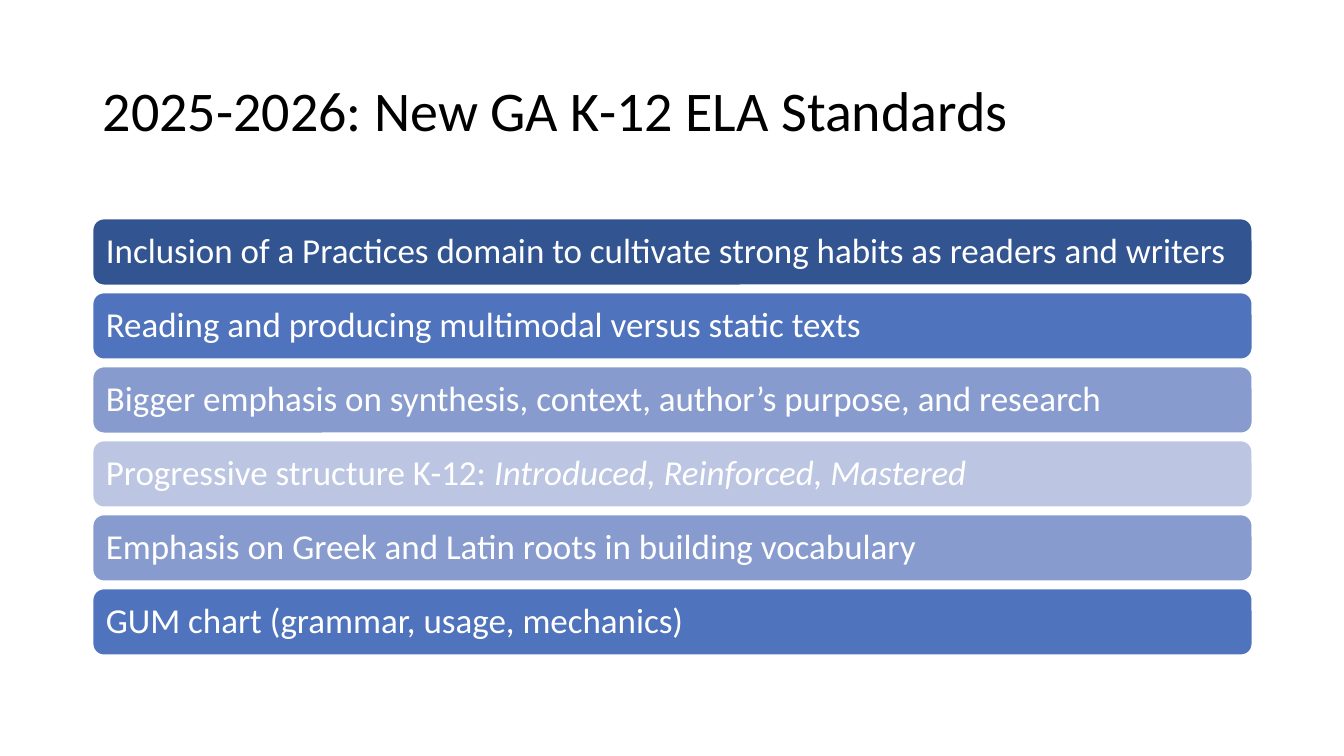
from dataclasses import dataclass

import pptx
import pptx.dml.color
import pptx.enum.shapes
import pptx.enum.text
import pptx.presentation
import pptx.slide
import pptx.text.text
import pptx.util
from pptx.util import Inches


@dataclass(frozen=True)
class Theme:
    font: str = "Calibri"
    title_size: int = 40
    bar_size: int = 25
    black: str = "000000"
    white: str = "FFFFFF"
    navy: str = "325491"
    blue: str = "4F73BD"
    soft_blue: str = "879BCE"
    pale_blue: str = "BCC6E2"


@dataclass(frozen=True)
class Bar:
    text: str
    fill: str
    italic_text: str = ""


THEME = Theme()
LEFT, WIDTH = 0.92, 11.5
FIRST_TOP, LAST_TOP, BAR_HEIGHT = 2.17, 5.84, 0.66

BARS = [
    Bar("Inclusion of a Practices domain to cultivate strong habits as readers and writers", THEME.navy),
    Bar("Reading and producing multimodal versus static texts", THEME.blue),
    Bar("Bigger emphasis on synthesis, context, author’s purpose, and research", THEME.soft_blue),
    Bar("Progressive structure K-12: ", THEME.pale_blue, "Introduced, Reinforced, Mastered"),
    Bar("Emphasis on Greek and Latin roots in building vocabulary", THEME.soft_blue),
    Bar("GUM chart (grammar, usage, mechanics)", THEME.blue),
]


def rgb(color: str) -> pptx.dml.color.RGBColor:
    return pptx.dml.color.RGBColor.from_string(color)


def write(frame: pptx.text.text.TextFrame, text: str, *, size: int, color: str,
          italic_text: str = "") -> None:
    """Fill the frame with one left-aligned paragraph, optionally ending in italics."""
    frame.word_wrap = True
    frame.auto_size = pptx.enum.text.MSO_AUTO_SIZE.NONE
    frame.vertical_anchor = pptx.enum.text.MSO_ANCHOR.MIDDLE
    paragraph = frame.paragraphs[0]
    paragraph.alignment = pptx.enum.text.PP_ALIGN.LEFT
    paragraph.line_spacing = 0.9
    for content, italic in ((text, False), (italic_text, True)):
        if content:
            run = paragraph.add_run()
            run.text = content
            run.font.name = THEME.font
            run.font.size = pptx.util.Pt(size)
            run.font.italic = italic
            run.font.color.rgb = rgb(color)


def add_title(slide: pptx.slide.Slide, text: str) -> None:
    title = slide.shapes.title
    title.left, title.top = Inches(LEFT), Inches(0.4)
    title.width, title.height = Inches(WIDTH), Inches(1.45)
    write(title.text_frame, text, size=THEME.title_size, color=THEME.black)


def add_bar(slide: pptx.slide.Slide, bar: Bar, top: float) -> None:
    shape = slide.shapes.add_shape(
        pptx.enum.shapes.MSO_SHAPE.ROUNDED_RECTANGLE,
        Inches(LEFT), Inches(top), Inches(WIDTH), Inches(BAR_HEIGHT))
    shape.shadow.inherit = False
    shape.fill.solid()
    shape.fill.fore_color.rgb = rgb(bar.fill)
    shape.line.color.rgb = rgb(THEME.white)
    shape.line.width = pptx.util.Pt(1)
    frame = shape.text_frame
    frame.margin_left = frame.margin_right = Inches(0.1)
    frame.margin_top = frame.margin_bottom = Inches(0.1)
    write(frame, bar.text, size=THEME.bar_size, color=THEME.white, italic_text=bar.italic_text)


def main() -> None:
    presentation = pptx.Presentation()
    presentation.slide_width, presentation.slide_height = Inches(13.33), Inches(7.5)
    title_only = presentation.slide_layouts[5]
    slide = presentation.slides.add_slide(title_only)
    add_title(slide, "2025-2026: New GA K-12 ELA Standards")
    pitch = (LAST_TOP - FIRST_TOP) / (len(BARS) - 1)
    for index, bar in enumerate(BARS):
        add_bar(slide, bar, FIRST_TOP + index * pitch)
    presentation.save("out.pptx")


if __name__ == "__main__":
    main()
